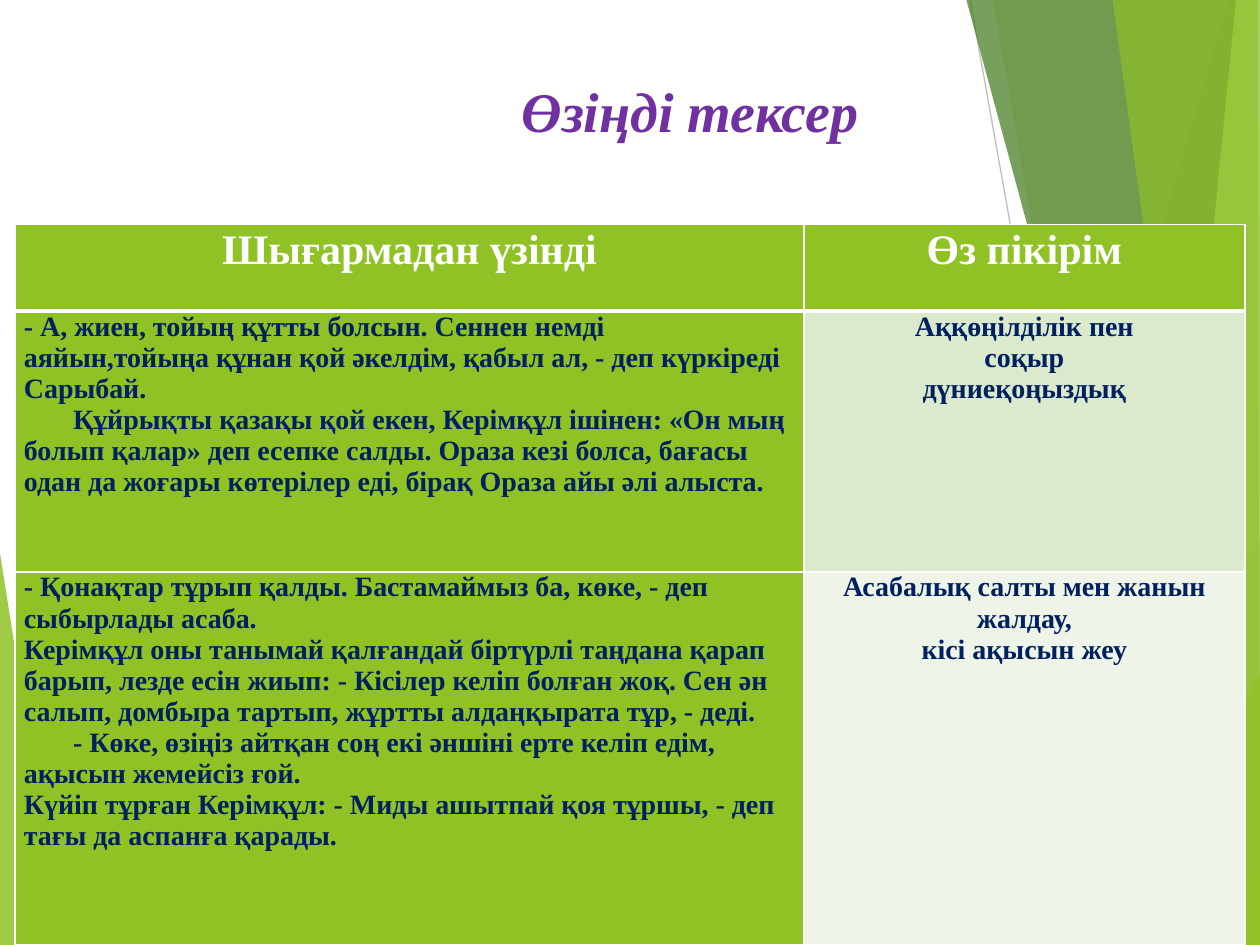
from dataclasses import dataclass

from pptx import Presentation
from pptx.dml.color import RGBColor as RGB
from pptx.enum.shapes import MSO_CONNECTOR as CONN
from pptx.enum.text import PP_ALIGN as AL
from pptx.oxml.ns import qn
from pptx.util import Inches, Pt
from lxml.etree import SubElement


@dataclass(frozen=True)
class Theme:
    """Colours, type sizes and font of the slide."""
    font: str = "Times New Roman"
    green: str = "90C226"
    forest: str = "54A021"
    dark: str = "3F7819"
    lime: str = "C0E474"
    band: str = "DBE9CD"
    pale: str = "EEF4E8"
    white: str = "FFFFFF"
    navy: str = "002060"
    purple: str = "7030A0"
    title: int = 32
    head: int = 24
    body: int = 16


T = Theme()
W, H = 10, 7.5

FACETS = [
    ([(0, 4.39), (0.49, H), (0, H)], T.green, 85),
    ([(9.75, 0), (7.54, H), (W, H), (W, 0)], T.green, 30),
    ([(7.88, 0), (9.19, H), (W, H), (W, 0)], T.green, 20),
    ([(7.26, H), (W, 4.29), (W, H)], T.forest, 72),
    ([(7.67, 0), (9.7, H), (W, H), (W, 0)], T.dark, 70),
    ([(9.81, 0), (9.07, H), (W, H), (W, 0)], T.lime, 70),
    ([(8.83, 0), (9.86, H), (W, H), (9.98, 0)], T.green, 65),
    ([(8.81, H), (W, 5.35), (W, H)], T.green, 80),
]
LINES = [((5.61, H), (W, 4.57), "D9D9D9"), ((7.7, 0), (9.04, H), "BFBFBF")]

HEADS = ["Шығармадан үзінді", "Өз пікірім"]
INDENT = "\t"
ROWS = [
    (["- А, жиен, тойың құтты болсын. Сеннен немді аяйын,тойыңа құнан қой әкелдім, "
      "қабыл ал, - деп күркіреді Сарыбай.",
      INDENT + "Құйрықты қазақы қой екен, Керімқұл ішінен: «Он мың болып қалар» деп "
      "есепке салды. Ораза кезі болса, бағасы одан да жоғары көтерілер еді, бірақ "
      "Ораза айы әлі алыста."],
     ["Аққөңілділік пен", "соқыр", "дүниеқоңыздық"]),
    (["- Қонақтар тұрып қалды. Бастамаймыз ба, көке, - деп сыбырлады асаба.",
      "Керімқұл оны танымай қалғандай біртүрлі таңдана қарап барып, лезде есін жиып: "
      "- Кісілер келіп болған жоқ. Сен ән салып, домбыра тартып, жұртты алдаңқырата "
      "тұр, - деді.",
      INDENT + "- Көке, өзіңіз айтқан соң екі әншіні ерте келіп едім, ақысын жемейсіз ғой.",
      "Күйіп тұрған Керімқұл: - Миды ашытпай қоя тұршы, - деп тағы да аспанға қарады."],
     ["Асабалық салты мен жанын жалдау,", "кісі ақысын жеу"]),
]


def style(p, size, color, align=AL.LEFT, italic=False):
    """Set the font and alignment of a paragraph."""
    p.alignment = align
    f = p.font
    f.name, f.size, f.bold, f.italic = T.font, Pt(size), True, italic
    f.color.rgb = RGB.from_string(color)


def add_facet(slide, points, color, opacity):
    """Draw one translucent polygon."""
    pts = [(Inches(x), Inches(y)) for x, y in points]
    fb = slide.shapes.build_freeform(*pts[0])
    fb.add_line_segments(pts[1:], close=True)
    sp = fb.convert_to_shape()
    sp.shadow.inherit = False
    sp.line.fill.background()
    sp.fill.solid()
    sp.fill.fore_color.rgb = RGB.from_string(color)
    clr = sp.fill._xPr.find(qn("a:solidFill"))[0]
    SubElement(clr, qn("a:alpha")).set("val", str(opacity * 1000))


def add_backdrop(slide):
    """Draw the thin lines and green facets."""
    for start, end, color in LINES:
        ln = slide.shapes.add_connector(CONN.STRAIGHT, *map(Inches, start + end))
        ln.line.color.rgb = RGB.from_string(color)
        ln.line.width = Pt(0.75)
        SubElement(ln._element.spPr, qn("a:effectLst"))
    for facet in FACETS:
        add_facet(slide, *facet)


def add_title(slide, box, text):
    """Place the title in its box."""
    tf = slide.shapes.add_textbox(*map(Inches, box)).text_frame
    tf.word_wrap = True
    tf.margin_top = Inches(0.09)
    p = tf.paragraphs[0]
    p.text = text
    style(p, T.title, T.purple, AL.CENTER, italic=True)


def set_borders(cell, **widths):
    """Give a cell white borders of the given point widths."""
    tc_pr = cell._tc.get_or_add_tcPr()
    for side, width in widths.items():
        ln = SubElement(tc_pr, qn("a:ln" + side), w=str(Pt(width)))
        fill = SubElement(ln, qn("a:solidFill"))
        SubElement(fill, qn("a:srgbClr"), val=T.white)


def fill_cell(cell, texts, fill, size, color, align, top=1, bottom=1):
    """Fill a cell with paragraphs, borders and a background."""
    cell.margin_left = cell.margin_right = Inches(0.07)
    cell.margin_top = cell.margin_bottom = 0
    set_borders(cell, L=1, R=1, T=top, B=bottom)
    cell.fill.solid()
    cell.fill.fore_color.rgb = RGB.from_string(fill)
    tf = cell.text_frame
    for i, text in enumerate(texts):
        p = tf.add_paragraph() if i else tf.paragraphs[0]
        p.text = text.lstrip(INDENT)
        style(p, size, color, align)
        if text.startswith(INDENT):
            p._p.get_or_add_pPr().set("indent", str(Inches(0.39)))


def add_table(slide, box, cols, heights):
    """Place the table of excerpts and opinions."""
    table = slide.shapes.add_table(len(heights), len(cols), *map(Inches, box)).table
    for col, width in zip(table.columns, cols):
        col.width = Inches(width)
    for row, height in zip(table.rows, heights):
        row.height = Inches(height)
    for c, head in enumerate(HEADS):
        cell = table.cell(0, c)
        fill_cell(cell, [head], T.green, T.head, T.white, AL.CENTER, bottom=3)
        cell.text_frame.paragraphs[0].line_spacing = 1.07
    for r, ((excerpt, opinion), tint) in enumerate(zip(ROWS, (T.band, T.pale)), 1):
        top = 3 if r == 1 else 1
        fill_cell(table.cell(r, 0), excerpt, T.green, T.body, T.navy, AL.LEFT, top)
        fill_cell(table.cell(r, 1), opinion, tint, T.body, T.navy, AL.CENTER, top)


def main():
    """Build and save the slide."""
    prs = Presentation()
    prs.slide_width, prs.slide_height = Inches(W), Inches(H)
    slide = prs.slides.add_slide(prs.slide_layouts[6])
    add_backdrop(slide)
    add_table(slide, (0.12, 1.78, 9.76, 5.72), (6.26, 3.5), (0.69, 2.07, 2.96))
    add_title(slide, (2.5, 0.52, 5.96, 1.18), "Өзіңді тексер")
    prs.save("out.pptx")


if __name__ == "__main__":
    main()
